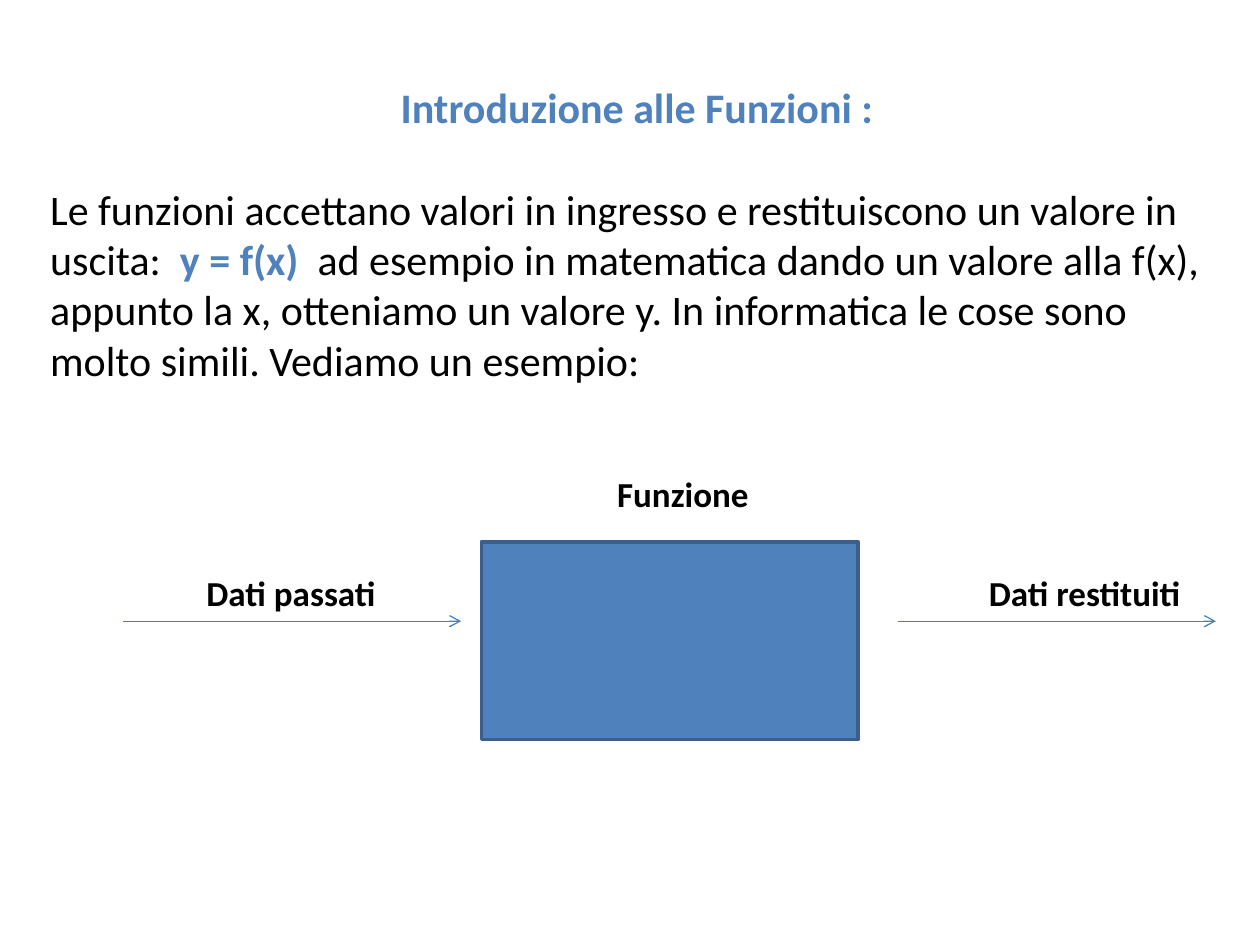
import collections
import pptx
import pptx.dml.color
import pptx.enum.shapes
import pptx.enum.text
import pptx.oxml
import pptx.oxml.ns
import pptx.util

COLUMNS, ROWS = 100, 75
CELL = pptx.util.Inches(0.1)
BLUE, DARK_BLUE, LINE_BLUE, BLACK = "4F81BD", "3A5F8C", "4B7EBC", "000000"
Box = collections.namedtuple("Box", "left top width height")


def cells(*counts):
    return [round(count * CELL) for count in counts]


def color(value):
    return pptx.dml.color.RGBColor.from_string(value)


def add_run(paragraph, text, size, value, bold):
    run = paragraph.add_run()
    run.text = text
    run.font.name = "Calibri"
    run.font.size = pptx.util.Pt(size)
    run.font.bold = bold
    run.font.color.rgb = color(value)


def add_label(slide, box, text):
    frame = slide.shapes.add_textbox(*cells(*box)).text_frame
    frame.word_wrap = False
    add_run(frame.paragraphs[0], text, 20, BLACK, True)


def add_arrow(slide, left, right, row):
    arrow = slide.shapes.add_connector(
        pptx.enum.shapes.MSO_CONNECTOR.STRAIGHT, *cells(left, row, right, row))
    arrow.line.color.rgb = color(LINE_BLUE)
    arrow.line.width = pptx.util.Pt(0.75)
    head = pptx.oxml.parse_xml(
        f'<a:tailEnd {pptx.oxml.ns.nsdecls("a")} type="arrow"/>')
    arrow.line._get_or_add_ln().append(head)
    effects = pptx.oxml.parse_xml(f'<a:effectLst {pptx.oxml.ns.nsdecls("a")}/>')
    arrow._element.spPr.append(effects)


def add_introduction(slide, box):
    frame = slide.shapes.add_textbox(*cells(*box)).text_frame
    frame.word_wrap = True
    frame.margin_top = pptx.util.Inches(0.45)
    title = frame.paragraphs[0]
    title.alignment = pptx.enum.text.PP_ALIGN.CENTER
    add_run(title, "Introduzione alle Funzioni :", 24, BLUE, True)
    body = frame.add_paragraph()
    body.space_before = pptx.util.Pt(29)
    add_run(body, "Le funzioni accettano valori in ingresso e restituiscono "
            "un valore in uscita:  ", 24, BLACK, False)
    add_run(body, "y = f(x)  ", 24, BLUE, True)
    add_run(body, "ad esempio in matematica dando un valore alla f(x), appunto "
            "la x, otteniamo un valore y. In informatica le cose sono molto "
            "simili. Vediamo un esempio:", 24, BLACK, False)


def add_function_diagram(slide, box):
    left, top, width, height = box
    arrow_row = top + 12.3
    label_row = arrow_row - 4.4
    add_arrow(slide, left, left + 26.8, arrow_row)
    block = slide.shapes.add_shape(
        pptx.enum.shapes.MSO_SHAPE.RECTANGLE,
        *cells(left + 28.4, top + 6, 29.9, height - 6))
    block.shadow.inherit = False
    block.fill.solid()
    block.fill.fore_color.rgb = color(BLUE)
    block.line.color.rgb = color(DARK_BLUE)
    block.line.width = pptx.util.Pt(2)
    add_arrow(slide, left + width - 25.2, left + width, arrow_row)
    add_label(slide, Box(left + 5.6, label_row, 15.6, 4.4), "Dati passati")
    add_label(slide, Box(left + 38.2, top, 12.6, 4.4), "Funzione")
    add_label(slide, Box(left + 67.7, label_row, 17.4, 4.4), "Dati restituiti")


def main():
    presentation = pptx.Presentation()
    presentation.slide_width, presentation.slide_height = cells(COLUMNS, ROWS)
    slide = presentation.slides.add_slide(presentation.slide_layouts[6])
    add_introduction(slide, Box(3, 2, 95.1, 29.3))
    add_function_diagram(slide, Box(9.8, 37, 86.7, 21.7))
    presentation.save("out.pptx")


if __name__ == "__main__":
    main()
